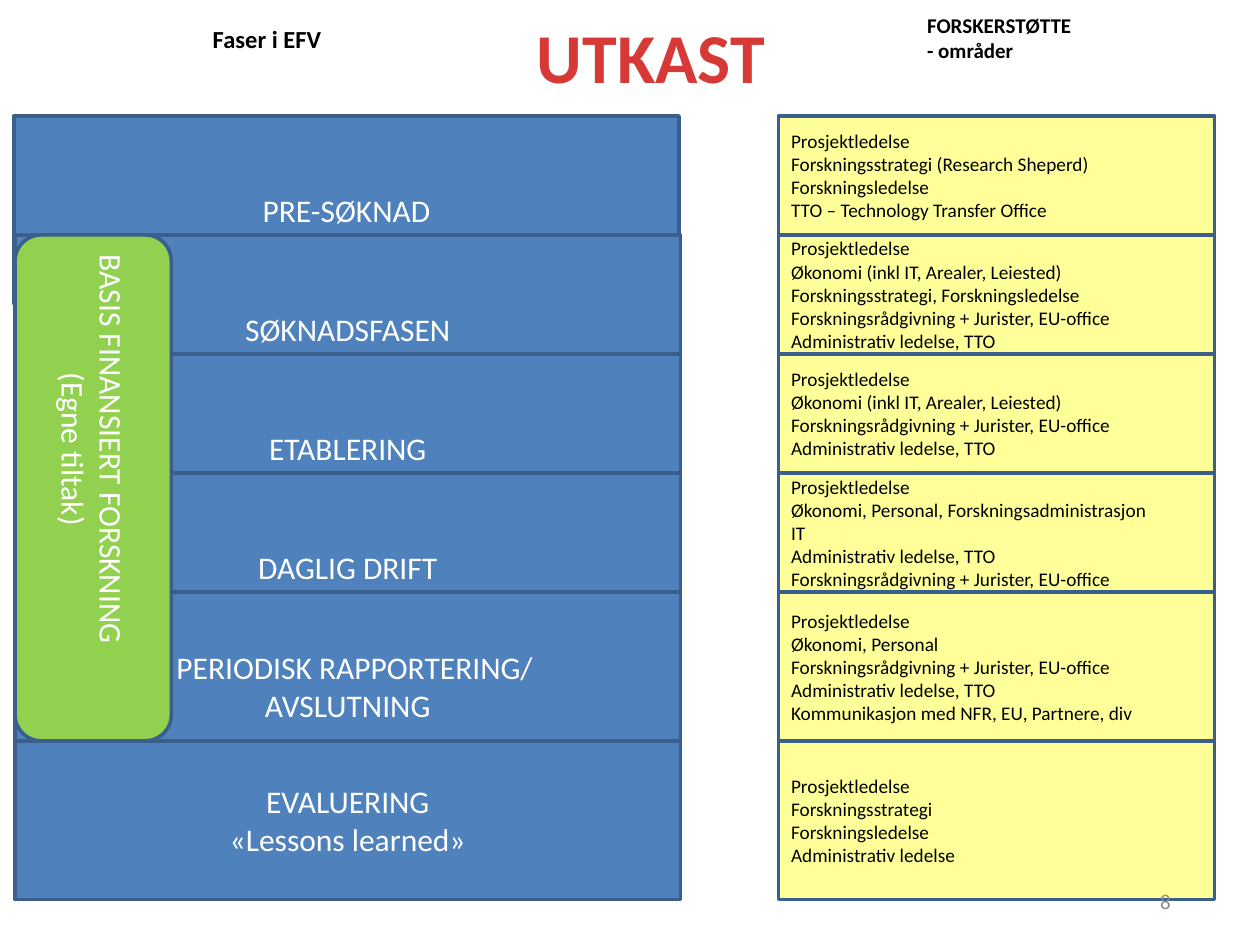
from pptx import Presentation
from pptx.dml.color import RGBColor
from pptx.enum.shapes import MSO_SHAPE
from pptx.enum.text import MSO_ANCHOR, PP_ALIGN
from pptx.util import Inches, Pt

RECT, ROUND = MSO_SHAPE.RECTANGLE, MSO_SHAPE.ROUNDED_RECTANGLE
LEFT, CENTER, RIGHT = PP_ALIGN.LEFT, PP_ALIGN.CENTER, PP_ALIGN.RIGHT
TOP, MIDDLE = MSO_ANCHOR.TOP, MSO_ANCHOR.MIDDLE

COLORS = {"blue": "4F81BD", "edge": "3A5F8C", "green": "92D050",
          "yellow": "FFFF99", "red": "D73A36", "gray": "8C8C8C",
          "white": "FFFFFF", "black": "000000"}

LEAD, ADMIN = "Prosjektledelse", "Administrativ ledelse, TTO"
ADVICE = "Forskningsrådgivning + Jurister, EU-office"
MONEY = "Økonomi (inkl IT, Arealer, Leiested)"

# Each phase with the support areas that go with it
PHASES = [
    (["PRE-SØKNAD"],
     [LEAD, "Forskningsstrategi (Research Sheperd)", "Forskningsledelse",
      "TTO – Technology Transfer Office"]),
    (["SØKNADSFASEN"],
     [LEAD, MONEY, "Forskningsstrategi, Forskningsledelse", ADVICE, ADMIN]),
    (["ETABLERING"], [LEAD, MONEY, ADVICE, ADMIN]),
    (["DAGLIG DRIFT"],
     [LEAD, "Økonomi, Personal, Forskningsadministrasjon", "IT", ADMIN, ADVICE]),
    (["PERIODISK RAPPORTERING/", "AVSLUTNING"],
     [LEAD, "Økonomi, Personal", ADVICE, ADMIN,
      "Kommunikasjon med NFR, EU, Partnere, div"]),
    (["EVALUERING", "«Lessons learned»"],
     [LEAD, "Forskningsstrategi", "Forskningsledelse", "Administrativ ledelse"]),
]
BASIS = ["BASIS FINANSIERT FORSKNING", "(Egne tiltak)"]

# Text, box, size, bold, colour, alignment, anchor, wrap
LABELS = [
    (["FORSKERSTØTTE", "- områder"], (7.26, 0.05, 1.36, 0.5),
     12, True, "black", LEFT, TOP, False),
    (["Faser i EFV"], (1.59, 0.14, 1.07, 0.34),
     14, True, "black", LEFT, TOP, False),
    (["8"], (6.69, 6.95, 2.7, 0.4), 12, False, "gray", RIGHT, MIDDLE, True),
]

# Grid: equal rows, then a taller one and the last
STEP, FIRST = 0.945, 0.92
EDGES = [FIRST + STEP * i for i in range(5)] + [5.88, 7.14]
PHASE_X, PHASE_W, PHASE_H = 0.12, 5.28, 1.49
AREA_X, AREA_W = 6.18, 3.46
BASIS_W = 1.24


def color(name):
    return RGBColor.from_string(COLORS[name])


def write(shape, lines, size, tint, align, anchor=MIDDLE, bold=False, wrap=True):
    frame = shape.text_frame
    frame.word_wrap = wrap
    frame.vertical_anchor = anchor
    frame.text = "\n".join(lines)
    for par in frame.paragraphs:
        par.alignment = align
        font = par.font
        font.name, font.size, font.bold = "Calibri", Pt(size), bold
        font.color.rgb = color(tint)
    return frame


def block(kind, box, fill, lines, size, tint, align):
    """Draw a filled, outlined shape and return its text frame."""
    shape = slide.shapes.add_shape(kind, *map(Inches, box))
    shape.shadow.inherit = False
    shape.fill.solid()
    shape.fill.fore_color.rgb = color(fill)
    shape.line.color.rgb = color("edge")
    shape.line.width = Pt(2)
    return write(shape, lines, size, tint, align)


deck = Presentation()
deck.slide_width, deck.slide_height = Inches(10), Inches(7.5)
slide = deck.slides.add_slide(deck.slide_layouts[5])

title = slide.shapes.title
title.left, title.top, title.width, title.height = map(
    Inches, (3.67, 0.06, 2.99, 0.77))
write(title, ["UTKAST"], 40, "red", CENTER, TOP, True)

# Phases overlap downwards, so each covers the foot of the one before
for (names, _), top, end in zip(PHASES, EDGES, EDGES[1:]):
    tall = end - top if end == EDGES[-1] else PHASE_H
    left = PHASE_X - 0.01 if top == FIRST else PHASE_X
    frame = block(RECT, (left, top, PHASE_W, tall), "blue",
                  names, 18, "white", CENTER)
    if names[0].startswith("PERIODISK"):
        # Keep the long line clear of the green block
        props = frame.paragraphs[0]._p.get_or_add_pPr()
        props.set("marL", str(Inches(0.11)))

basis = block(ROUND, (PHASE_X, EDGES[1], BASIS_W, EDGES[5] - EDGES[1]),
              "green", BASIS, 18, "white", CENTER)
basis._txBody.bodyPr.set("vert", "eaVert")

for (_, areas), top, end in zip(PHASES, EDGES, EDGES[1:]):
    block(RECT, (AREA_X, top, AREA_W, end - top), "yellow",
          areas, 11, "black", LEFT)

for lines, box, size, bold, tint, align, anchor, wrap in LABELS:
    label = slide.shapes.add_textbox(*map(Inches, box))
    write(label, lines, size, tint, align, anchor, bold, wrap)

deck.save("out.pptx")
